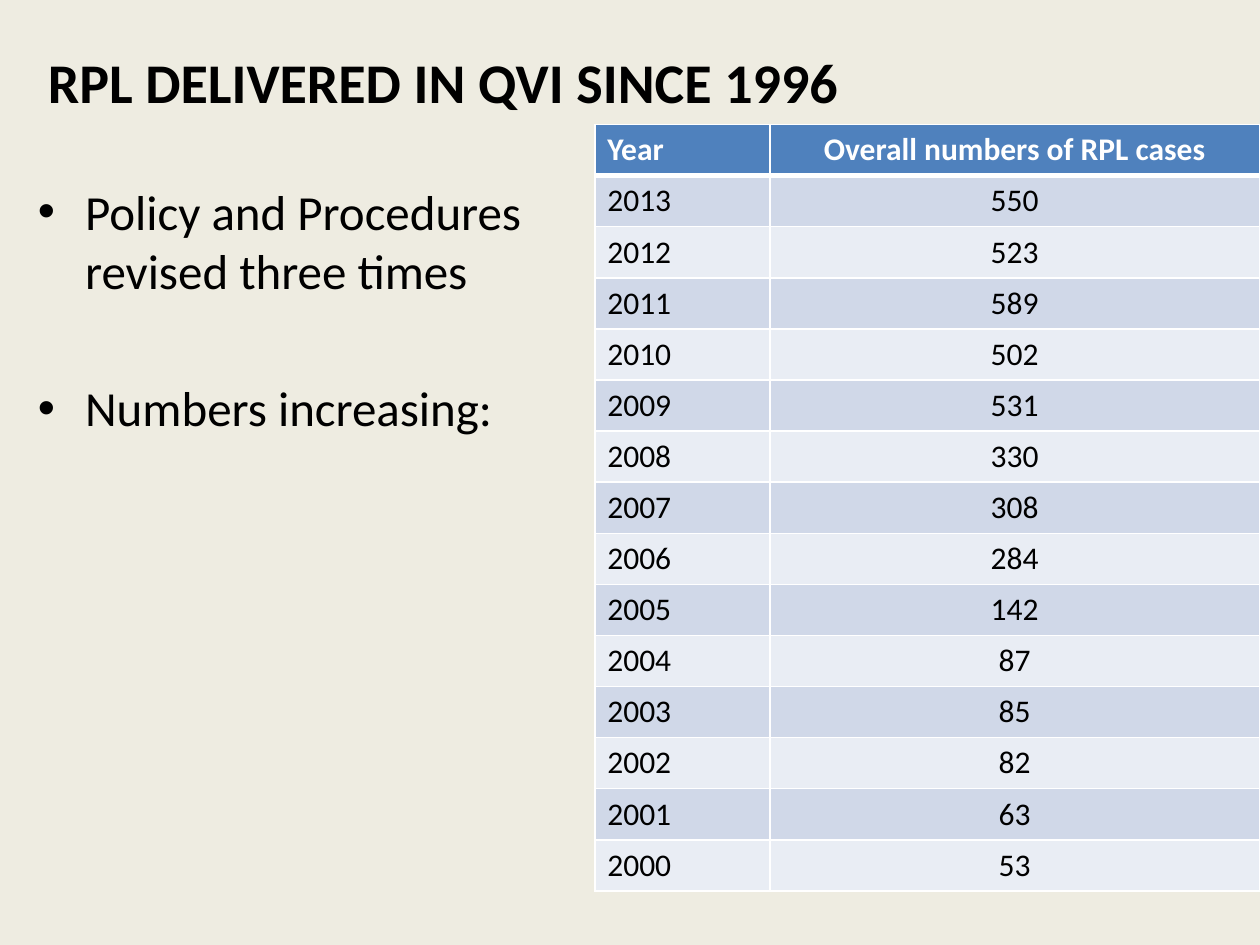
from dataclasses import dataclass
from typing import Any

import pptx
import pptx.dml.color
import pptx.enum.text
import pptx.oxml
import pptx.oxml.ns
import pptx.util

Cm = pptx.util.Cm
Pt = pptx.util.Pt
Align = pptx.enum.text.PP_ALIGN
Anchor = pptx.enum.text.MSO_ANCHOR
AutoSize = pptx.enum.text.MSO_AUTO_SIZE


@dataclass(frozen=True)
class Theme:
    font: str = "Calibri"
    background: str = "EEECE1"
    ink: str = "000000"
    white: str = "FFFFFF"
    header: str = "4F81BD"
    bands: tuple[str, str] = ("D0D8E8", "E9EDF4")
    title_size: int = 32
    body_size: int = 28
    table_size: int = 18
    rule: int = 1
    header_rule: int = 3


@dataclass(frozen=True)
class Box:
    left: float
    top: float
    width: float
    height: float


@dataclass(frozen=True)
class Row:
    year: str
    cases: str


THEME = Theme()
TITLE_BOX = Box(0.71, 0.05, 22.86, 3.18)
POINTS_BOX = Box(0.51, 3.53, 11.4, 13.89)
TABLE_BOX = Box(11.99, 2.51, 13.4, 15.24)
COLUMN_WIDTHS = (3.53, 9.87)
POINT_GAP = 45
POINTS = ("Policy and Procedures revised three times", "Numbers increasing:")
HEADER = Row("Year", "Overall numbers of RPL cases")
CASES = (550, 523, 589, 502, 531, 330, 308, 284, 142, 87, 85, 82, 63, 53)
LATEST_YEAR = 2013
ROWS = [Row(str(LATEST_YEAR - age), str(count)) for age, count in enumerate(CASES)]


def rgb(value: str) -> pptx.dml.color.RGBColor:
    return pptx.dml.color.RGBColor.from_string(value)


def apply(target: Any, values: dict[str, Any]) -> None:
    for attribute, value in values.items():
        setattr(target, attribute, value)


def box_values(box: Box) -> dict[str, Any]:
    return {
        "left": Cm(box.left),
        "top": Cm(box.top),
        "width": Cm(box.width),
        "height": Cm(box.height),
    }


def write(paragraph: Any, text: str, size: int, color: str, bold: bool = False) -> None:
    run = paragraph.add_run()
    run.text = text
    apply(run.font, {"name": THEME.font, "size": Pt(size), "bold": bold})
    run.font.color.rgb = rgb(color)


def draw_title(title: Any, text: str) -> None:
    apply(title, box_values(TITLE_BOX))
    apply(title.text_frame, {"vertical_anchor": Anchor.MIDDLE, "auto_size": AutoSize.NONE})
    heading = title.text_frame.paragraphs[0]
    heading.alignment = Align.LEFT
    write(heading, text, THEME.title_size, THEME.ink, bold=True)


def draw_points(body: Any, points: tuple[str, ...]) -> None:
    apply(body, box_values(POINTS_BOX))
    frame = body.text_frame
    frame.auto_size = AutoSize.NONE
    for index, point in enumerate(points):
        paragraph = frame.add_paragraph() if index else frame.paragraphs[0]
        if index:
            paragraph.space_before = Pt(POINT_GAP)
        write(paragraph, point, THEME.body_size, THEME.ink)


def draw_borders(cell: Any, widths: dict[str, int]) -> None:
    properties = cell._tc.get_or_add_tcPr()
    namespace = pptx.oxml.ns.nsdecls("a")
    for side, width in widths.items():
        properties.append(pptx.oxml.parse_xml(
            f'<a:{side} {namespace} w="{Pt(width)}"><a:solidFill>'
            f'<a:srgbClr val="{THEME.white}"/></a:solidFill></a:{side}>'
        ))


def draw_row(table: Any, index: int, row: Row) -> None:
    is_header = index == 0
    fill = THEME.header if is_header else THEME.bands[(index - 1) % 2]
    color = THEME.white if is_header else THEME.ink
    widths = dict.fromkeys(("lnL", "lnR", "lnT", "lnB"), THEME.rule)
    if is_header:
        widths["lnB"] = THEME.header_rule
    if index == 1:
        widths["lnT"] = THEME.header_rule
    entries = ((row.year, Align.LEFT), (row.cases, Align.CENTER))
    for column, (text, alignment) in enumerate(entries):
        cell = table.cell(index, column)
        draw_borders(cell, widths)
        cell.fill.solid()
        cell.fill.fore_color.rgb = rgb(fill)
        entry = cell.text_frame.paragraphs[0]
        entry.alignment = alignment
        write(entry, text, THEME.table_size, color, bold=is_header)


def draw_table(slide: Any, rows: list[Row]) -> None:
    table = slide.shapes.add_table(
        len(rows), len(COLUMN_WIDTHS), **box_values(TABLE_BOX)
    ).table
    for column, width in zip(table.columns, COLUMN_WIDTHS):
        column.width = Cm(width)
    for index, row in enumerate(rows):
        draw_row(table, index, row)


def main() -> None:
    deck = pptx.Presentation()
    apply(deck, {"slide_width": Cm(25.4), "slide_height": Cm(19.05)})
    slide = deck.slides.add_slide(deck.slide_layouts[1])
    slide.background.fill.solid()
    slide.background.fill.fore_color.rgb = rgb(THEME.background)
    draw_title(slide.shapes.title, "RPL DELIVERED IN QVI SINCE 1996")
    draw_points(slide.placeholders[1], POINTS)
    draw_table(slide, [HEADER, *ROWS])
    deck.save("out.pptx")


if __name__ == "__main__":
    main()
